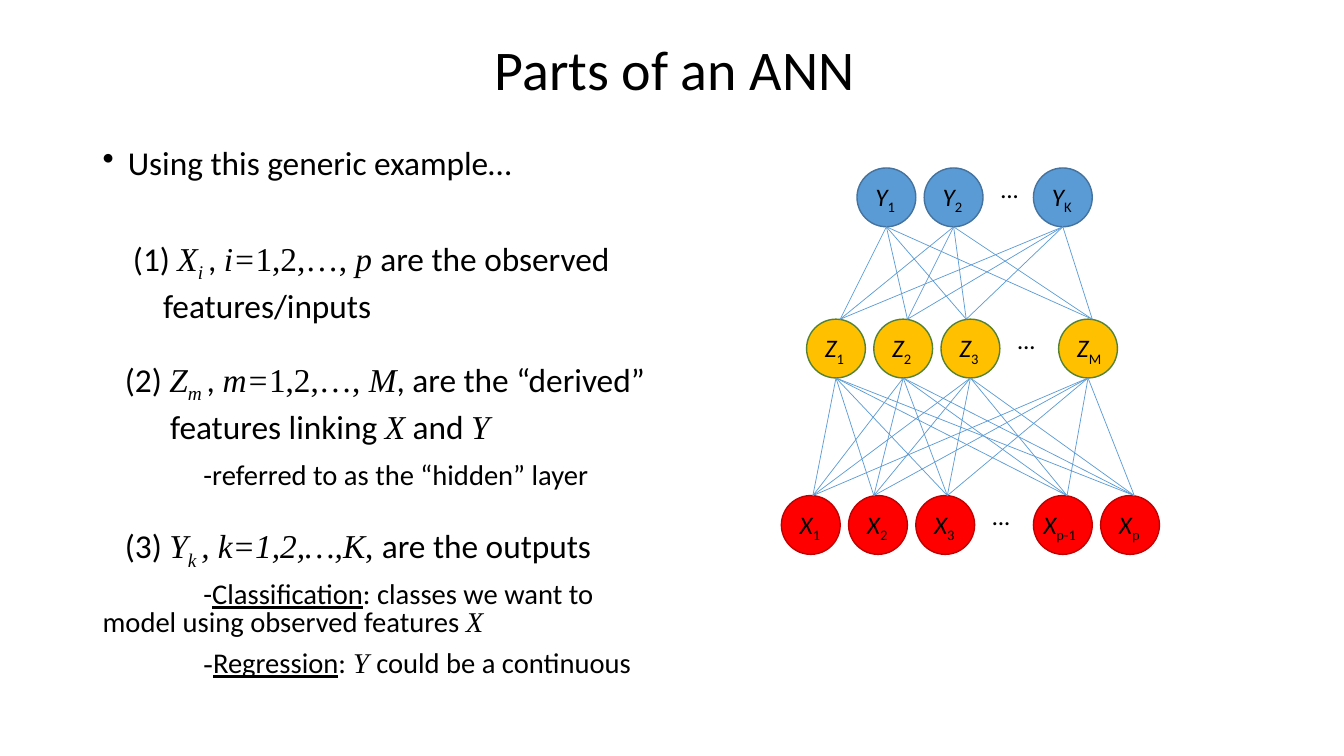
"""Build the slide "Parts of an ANN": explanatory text beside a three-layer network."""
import pptx
import pptx.dml.color
import pptx.enum.shapes
import pptx.enum.text
import pptx.oxml.ns
import pptx.util
from lxml import etree

INCH = pptx.util.Inches(1)
UNIT = INCH / 12


def colour(value):
    return pptx.dml.color.RGBColor.from_string(value)


def add_paragraph(frame, runs, size):
    first = frame.paragraphs[0]
    paragraph = frame.add_paragraph() if first.runs else first
    paragraph.font.size = pptx.util.Pt(size)
    paragraph.font.color.rgb = colour("000000")
    paragraph.font.name = "Calibri"
    for text, style in runs:
        run = paragraph.add_run()
        run.text = text
        if "t" in style:
            run.font.name = "Times New Roman"
        if "i" in style:
            run.font.italic = True
        if "u" in style:
            run.font.underline = True
        if "s" in style:
            run.font._element.set("baseline", "-25000")
    return paragraph


deck = pptx.Presentation()
deck.slide_width, deck.slide_height = int(13.33 * INCH), int(7.5 * INCH)
slide = deck.slides.add_slide(deck.slide_layouts[6])
shapes = slide.shapes

title = shapes.add_textbox(*[int(n * INCH) for n in (0.94, -0.01, 11.5, 1.45)]).text_frame
title.word_wrap = True
title.vertical_anchor = pptx.enum.text.MSO_ANCHOR.MIDDLE
heading = add_paragraph(title, [("Parts of an ANN", "")], 40)
heading.alignment = pptx.enum.text.PP_ALIGN.CENTER
heading.line_spacing = 0.9

# left margin, first-line indent, space before, size, runs
explanation = [
    (0.25, -0.25, 10, 23.8, [("Using this generic example…", "")]),
    (0.3, 0, 43, 23.8, [("(1) ", ""), ("X", "ti"), ("i ", "tis"), (", ", ""), ("i=", "ti"),
                        ("1,2,…, ", "t"), ("p ", "ti"), ("are the observed", "")]),
    (0.6, 0, 10, 23.8, [("features/inputs", "")]),
    (0.22, 0, 27.5, 23.8, [("(2) ", ""), ("Z", "ti"), ("m ", "tis"), (", ", ""), ("m=", "ti"),
                           ("1,2,…, ", "t"), ("M", "ti"), (", are the “derived”", "")]),
    (0.67, 0, 10, 23.8, [("features linking ", ""), ("X", "ti"), (" and ", ""), ("Y", "ti")]),
    (0, 1, 13, 20.4, [("-referred to as the “hidden” layer", "")]),
    (0.22, 0, 27.5, 23.8, [("(3) ", ""), ("Y", "ti"), ("k ", "tis"), (", k=1,2,…,K", "ti"),
                           (", ", "t"), ("are the outputs", "")]),
    (0, 1, 12, 20.4, [("-", ""), ("Classification", "u"),
                      (": classes we want to model using observed features ", ""), ("X", "ti")]),
    (0, 1, 10, 20.4, [("-", "ti"), ("Regression", "u"), (":", ""), (" Y ", "ti"),
                      ("could be a continuous", "")]),
]
body = shapes.add_textbox(*[int(n * INCH) for n in (0.92, 1.44, 5.67, 5.32)]).text_frame
body.word_wrap = True
for margin, indent, before, size, runs in explanation:
    paragraph = add_paragraph(body, runs, size)
    paragraph.line_spacing = 0.8
    paragraph.space_before = pptx.util.Pt(before)
    properties = paragraph._p.get_or_add_pPr()
    properties.set("marL", str(int(margin * INCH)))
    properties.set("indent", str(int(indent * INCH)))
    if indent < 0:
        bullet = etree.Element(pptx.oxml.ns.qn("a:buChar"), char="•")
        properties.find(pptx.oxml.ns.qn("a:defRPr")).addprevious(bullet)

# letter, top, fill, outline, ellipsis column, {subscript: (column, link end)}, all in twelfths of an inch
layers = [
    ("Y", 20, "5B9BD5", "43739E", 118, {"1": (102, 0), "2": (110, 0), "K": (123, 0)}),
    ("Z", 38, "FFC000", "548235", 120,
     {"1": (96, 100), "2": (104, 108), "3": (112, 115), "M": (126, 130)}),
    ("X", 59, "FF0000", "C00000", 117,
     {"1": (93, 96.75), "2": (101, 104), "3": (109, 112.75), "p-1": (123, 127), "p": (131, 135)}),
]
DIAMETER = 7
label_widths = {"M": 5.5, "p-1": 6.7}
for letter, top, fill, outline, ellipsis_column, nodes in layers:
    labels = [(ellipsis_column, top, 4.5, [("…", "i")])]
    for subscript, (column, _) in nodes.items():
        node = shapes.add_shape(pptx.enum.shapes.MSO_SHAPE.OVAL,
                                *[int(n * UNIT) for n in (column, top, DIAMETER, DIAMETER)])
        node.shadow.inherit = False
        node.fill.solid()
        node.fill.fore_color.rgb = colour(fill)
        node.line.color.rgb = colour(outline)
        node.line.width = pptx.util.Pt(1)
        label_column = column if subscript == "p-1" else column + 1
        labels.append((label_column, top + 1, label_widths.get(subscript, 5),
                       [(letter, "i"), (subscript, "s")]))
    for column, row, width, runs in labels:
        label = shapes.add_textbox(*[int(n * UNIT) for n in (column, row, width, 4.8)])
        label.text_frame.word_wrap = False
        add_paragraph(label.text_frame, runs, 18)

for upper, lower in zip(layers, layers[1:]):
    for column, _ in upper[5].values():
        for _, link_end in lower[5].values():
            ends = (column + DIAMETER / 2, upper[1] + DIAMETER, link_end, lower[1])
            link = shapes.add_connector(pptx.enum.shapes.MSO_CONNECTOR.STRAIGHT,
                                        *[int(n * UNIT) for n in ends])
            link.line.color.rgb = colour("5B9BD5")
            link.line.width = pptx.util.Pt(0.5)
            etree.SubElement(link._element.spPr, pptx.oxml.ns.qn("a:effectLst"))

deck.save("out.pptx")
